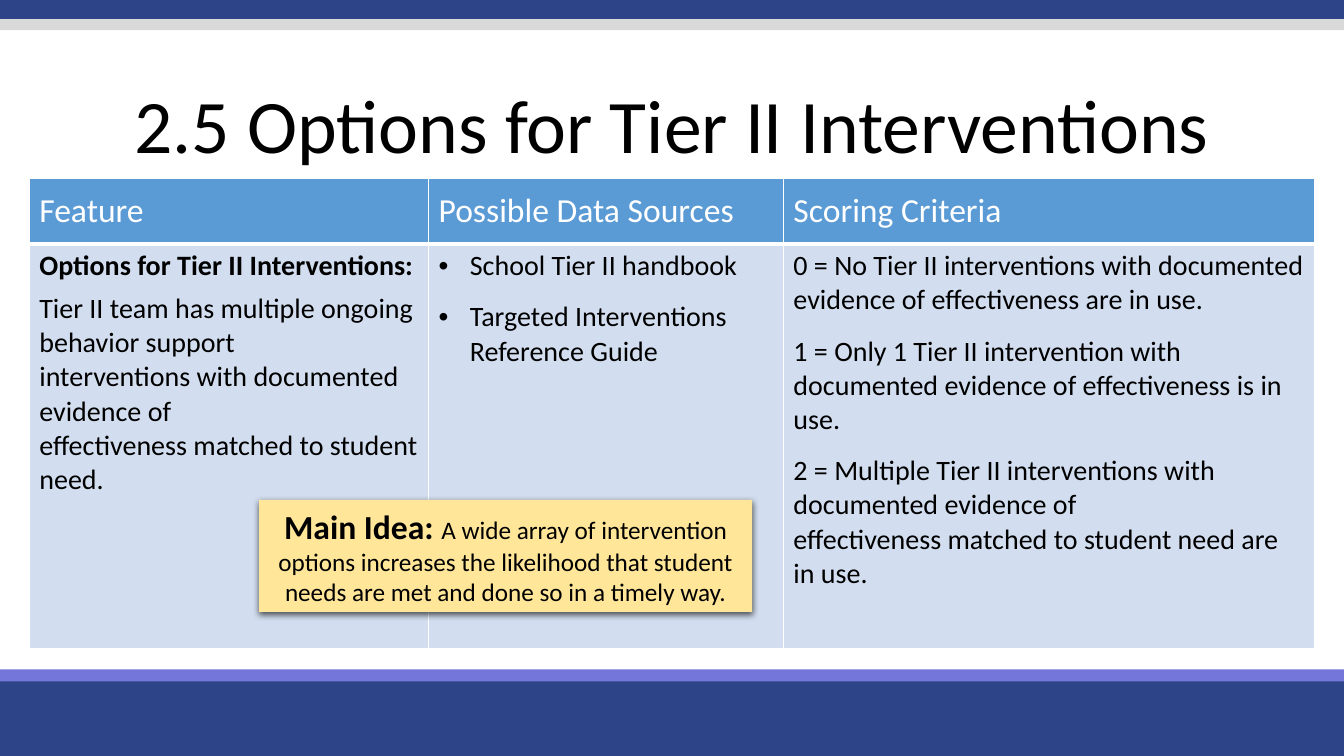
from lxml.etree import SubElement
from pptx import Presentation
from pptx.dml.color import RGBColor
from pptx.enum.shapes import MSO_SHAPE
from pptx.enum.text import MSO_ANCHOR, PP_ALIGN
from pptx.oxml import parse_xml
from pptx.oxml.ns import nsdecls, qn
from pptx.util import Pt

PX = 9144
WIDTH, HEIGHT = 1333, 750
FONT = "Calibri"
BLACK, WHITE = "000000", "FFFFFF"
NAVY, VIOLET, GREY = "2E4488", "7476DA", "D9D9D9"
HEADER_BLUE, BODY_BLUE, CREAM = "5B9BD5", "D2DEEF", "FFE699"

BANDS = [
    (670, 80, NAVY),
    (664, 12, VIOLET),
    (0, 19, NAVY),
    (19, 11, GREY),
]
COLUMNS = [
    ("Feature", 396),
    ("Possible Data Sources", 352),
    ("Scoring Criteria", 527),
]
ROW_HEIGHTS = [65, 401]
FEATURE = [
    ("Options for Tier II Interventions:", 6, True),
    ("Tier II team has multiple ongoing behavior support", 0, False),
    ("interventions with documented evidence of", 0, False),
    ("effectiveness matched to student need.", 0, False),
]
DATA_SOURCES = [
    ("School Tier II handbook", 12, False),
    ("Targeted Interventions Reference Guide", 12, False),
]
CRITERIA = [
    ("0 = No Tier II interventions with documented evidence of effectiveness are in use.", 12, False),
    ("1 = Only 1 Tier II intervention with documented evidence of effectiveness is in use.", 12, False),
    ("2 = Multiple Tier II interventions with documented evidence of", 0, False),
    ("effectiveness matched to student need are in use.", 0, False),
]


def px(*lengths):
    """Turn pixel lengths into EMU."""
    return [length * PX for length in lengths]


def paint(target, color):
    """Give a fill or a font colour format a solid hex colour."""
    if hasattr(target, "solid"):
        target.solid()
        target = target.fore_color
    target.rgb = RGBColor.from_string(color)


def add_run(paragraph, text, size, color=BLACK, bold=False):
    """Append one formatted run to a paragraph."""
    run = paragraph.add_run()
    run.text = text
    run.font.name = FONT
    run.font.size = Pt(size)
    run.font.bold = bold
    paint(run.font.color, color)


def next_paragraph(frame, index):
    """Return the first paragraph of a frame, or a new one after it."""
    return frame.add_paragraph() if index else frame.paragraphs[0]


def add_rectangle(slide, box, color):
    """Draw a plain filled rectangle."""
    rectangle = slide.shapes.add_shape(MSO_SHAPE.RECTANGLE, *px(*box))
    rectangle.shadow.inherit = False
    paint(rectangle.fill, color)
    rectangle.line.fill.background()
    return rectangle


def add_title(slide, text):
    """Write the centred slide title."""
    title = slide.shapes.add_textbox(*px(0, 69, WIDTH, 118)).text_frame
    title.word_wrap = True
    title.vertical_anchor = MSO_ANCHOR.MIDDLE
    heading = title.paragraphs[0]
    heading.alignment = PP_ALIGN.CENTER
    heading.line_spacing = 0.9
    add_run(heading, text, 54)


def add_bullet(paragraph):
    """Give a paragraph a bullet with a hanging indent."""
    indent, = px(31)
    properties = paragraph._p.get_or_add_pPr()
    properties.set("marL", str(indent))
    properties.set("indent", str(-indent))
    SubElement(properties, qn("a:buFont"), typeface="Arial")
    SubElement(properties, qn("a:buChar"), char="•")


def set_borders(cell, bottom):
    """Draw white cell borders, with a bottom line of the given points."""
    properties = cell._tc.get_or_add_tcPr()
    for index, (side, width) in enumerate([("L", 1), ("R", 1), ("T", 1), ("B", bottom)]):
        properties.insert(index, parse_xml(
            f'<a:ln{side} {nsdecls("a")} w="{Pt(width)}"><a:solidFill>'
            f'<a:srgbClr val="{WHITE}"/></a:solidFill></a:ln{side}>'))


def fill_body(cell, paragraphs, bulleted):
    """Write the paragraphs of a body cell."""
    for index, (text, space_after, bold) in enumerate(paragraphs):
        paragraph = next_paragraph(cell.text_frame, index)
        paragraph.space_after = Pt(space_after)
        if bulleted:
            add_bullet(paragraph)
        add_run(paragraph, text, 20, bold=bold)


def add_feature_table(slide):
    """Build the table of feature, data sources and scoring criteria."""
    table_width = sum(width for _, width in COLUMNS)
    table = slide.shapes.add_table(
        len(ROW_HEIGHTS), len(COLUMNS), *px(29, 177, table_width, sum(ROW_HEIGHTS))).table
    table.horz_banding = False
    for row, height in zip(table.rows, ROW_HEIGHTS):
        row.height, = px(height)
    bodies = [FEATURE, DATA_SOURCES, CRITERIA]
    for index, ((label, width), paragraphs) in enumerate(zip(COLUMNS, bodies)):
        table.columns[index].width, = px(width)
        header, body = table.cell(0, index), table.cell(1, index)
        header.vertical_anchor = MSO_ANCHOR.MIDDLE
        add_run(header.text_frame.paragraphs[0], label, 24, WHITE)
        fill_body(body, paragraphs, paragraphs is DATA_SOURCES)
        for cell, color, bottom in [(header, HEADER_BLUE, 3), (body, BODY_BLUE, 1)]:
            paint(cell.fill, color)
            set_borders(cell, bottom)


def add_shadow(shape):
    """Cast a soft black shadow below a shape."""
    effects = shape._element.spPr.find(qn("a:effectLst"))
    shadow = SubElement(effects, qn("a:outerShdw"), blurRad=str(Pt(4.5)),
                        dist=str(Pt(1.5)), dir="5400000", algn="ctr", rotWithShape="0")
    tint = SubElement(shadow, qn("a:srgbClr"), val=BLACK)
    SubElement(tint, qn("a:alpha"), val="63000")


def add_main_idea(slide):
    """Place the main idea note over the table."""
    note = add_rectangle(slide, (257, 496, 489, 111), CREAM)
    add_shadow(note)
    frame = note.text_frame
    frame.word_wrap = True
    frame.vertical_anchor = MSO_ANCHOR.MIDDLE
    lines = [
        [("Main Idea: ", 24, True),
         ("A wide array of intervention options increases the likelihood that student", 18, False)],
        [("needs are met and done so in a timely way.", 18, False)],
    ]
    for index, runs in enumerate(lines):
        paragraph = next_paragraph(frame, index)
        paragraph.alignment = PP_ALIGN.CENTER
        for text, size, bold in runs:
            add_run(paragraph, text, size, bold=bold)


def main():
    """Build and save the slide."""
    deck = Presentation()
    deck.slide_width, deck.slide_height = px(WIDTH, HEIGHT)
    slide = deck.slides.add_slide(deck.slide_layouts[6])
    for top, height, color in BANDS:
        add_rectangle(slide, (0, top, WIDTH, height), color)
    add_title(slide, "2.5 Options for Tier II Interventions")
    add_feature_table(slide)
    add_main_idea(slide)
    deck.save("out.pptx")


if __name__ == "__main__":
    main()
